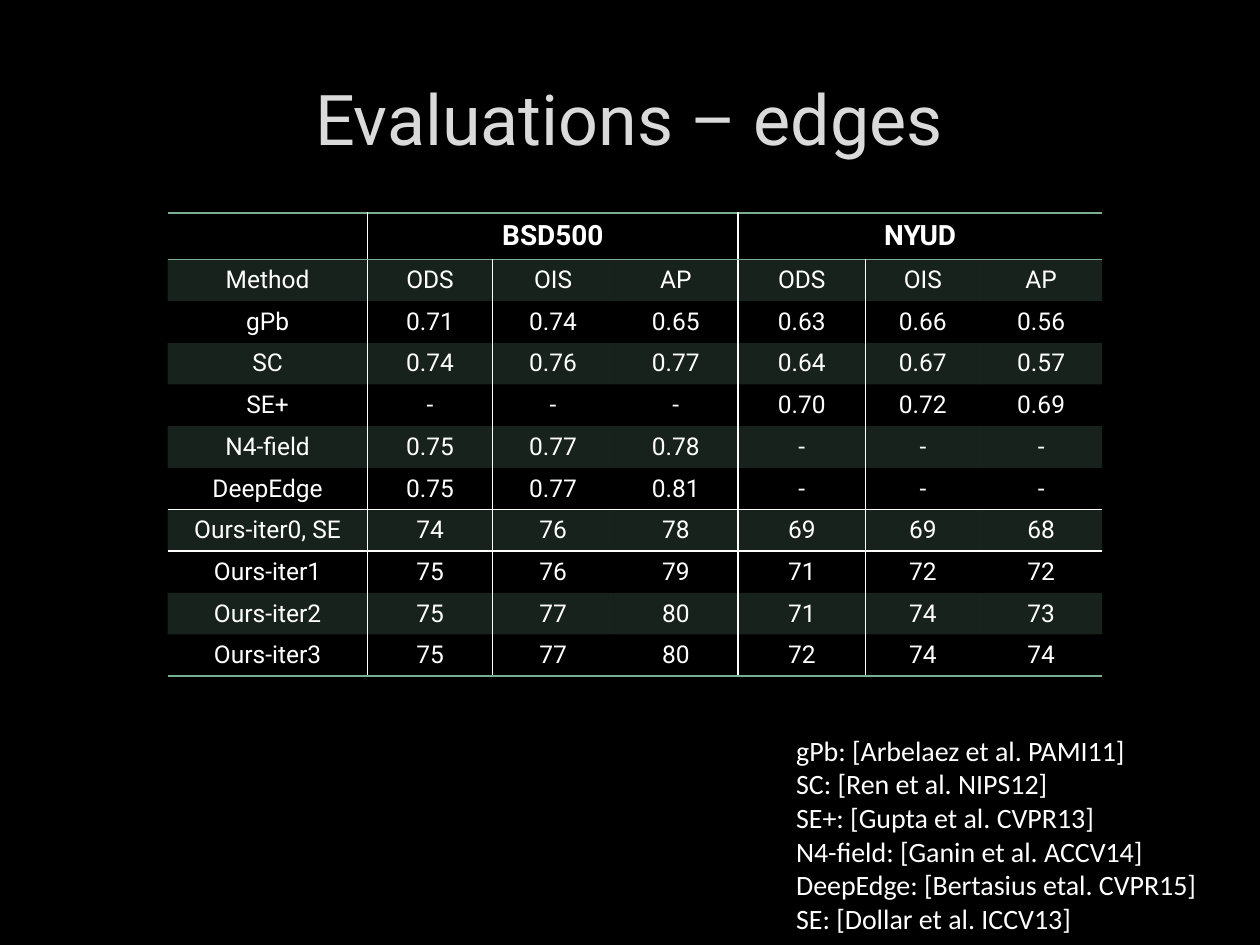
from lxml.etree import SubElement
from pptx import Presentation
from pptx.dml.color import RGBColor
from pptx.enum.text import MSO_ANCHOR, MSO_AUTO_SIZE, PP_ALIGN
from pptx.oxml.ns import qn
from pptx.util import Cm, Pt

WHITE, GREEN, GREY, BLACK = "FFFFFF", "79AE90", "DADADA", "000000"
WIDTHS = [4.03, 2.52, 2.44, 2.51, 2.57, 2.31, 2.46]
HEIGHTS = [0.94] + [0.84] * 10
ROWS = [
    ["", "BSD500", "", "", "NYUD", "", ""],
    ["Method", "ODS", "OIS", "AP", "ODS", "OIS", "AP"],
    ["gPb", "0.71", "0.74", "0.65", "0.63", "0.66", "0.56"],
    ["SC", "0.74", "0.76", "0.77", "0.64", "0.67", "0.57"],
    ["SE+", "-", "-", "-", "0.70", "0.72", "0.69"],
    ["N4-field", "0.75", "0.77", "0.78", "-", "-", "-"],
    ["DeepEdge", "0.75", "0.77", "0.81", "-", "-", "-"],
    ["Ours-iter0, SE", "74", "76", "78", "69", "69", "68"],
    ["Ours-iter1", "75", "76", "79", "71", "72", "72"],
    ["Ours-iter2", "75", "77", "80", "71", "74", "73"],
    ["Ours-iter3", "75", "77", "80", "72", "74", "74"],
]
SOURCES = [
    "gPb: [Arbelaez et al. PAMI11]",
    "SC: [Ren et al. NIPS12]",
    "SE+: [Gupta et al. CVPR13]",
    "N4-field: [Ganin et al. ACCV14]",
    "DeepEdge: [Bertasius etal. CVPR15]",
    "SE: [Dollar et al. ICCV13]",
]
ACROSS = {0: GREEN, 1: GREEN, 7: WHITE, 8: WHITE, 11: GREEN}


def paint(color):
    return RGBColor.from_string(color)


def upright(row, col):
    return WHITE if col in (1, 4) or (row and col in (2, 5)) else None


class Deck:
    """Holds the style and the current slide."""

    def __init__(self, font="Roboto"):
        self.font = font
        self.show = Presentation()
        self.show.slide_width, self.show.slide_height = Cm(25.4), Cm(19.05)
        self.slide = self.show.slides.add_slide(self.show.slide_layouts[6])
        fill = self.slide.background.fill
        fill.solid()
        fill.fore_color.rgb = paint(BLACK)

    def letter(self, frame, lines, size, color=WHITE, font=None, bold=False,
               align=PP_ALIGN.CENTER):
        frame.text = "\n".join(lines)
        for para in frame.paragraphs:
            para.alignment = align
            para.font.name = font or self.font
            para.font.size = Pt(size)
            para.font.bold = bold
            para.font.color.rgb = paint(color)

    def text(self, box, lines, size, wrap=True, **style):
        frame = self.slide.shapes.add_textbox(*map(Cm, box)).text_frame
        frame.word_wrap = wrap
        if wrap:
            frame.vertical_anchor = MSO_ANCHOR.MIDDLE
        else:
            frame.auto_size = MSO_AUTO_SIZE.SHAPE_TO_FIT_TEXT
        self.letter(frame, lines, size, **style)

    def edge(self, cell, side, color):
        props = cell._tc.get_or_add_tcPr()
        line = SubElement(props, qn("a:ln" + side), w=str(Pt(1)))
        if color:
            fill = SubElement(line, qn("a:solidFill"))
            SubElement(fill, qn("a:srgbClr"), val=color)
        else:
            SubElement(line, qn("a:noFill"))

    def shade(self, cell, color, alpha):
        cell.fill.solid()
        cell.fill.fore_color.rgb = paint(color)
        tint = cell._tc.tcPr.find(qn("a:solidFill")).find(qn("a:srgbClr"))
        SubElement(tint, qn("a:alpha"), val=str(alpha * 1000))

    def cell(self, cell, word, row, col):
        cell.margin_top = cell.margin_bottom = 0
        cell.vertical_anchor = MSO_ANCHOR.MIDDLE
        self.letter(cell.text_frame, [word], 14 if row else 16, bold=row == 0)
        self.edge(cell, "L", upright(row, col))
        self.edge(cell, "R", upright(row, col + cell.span_width))
        self.edge(cell, "T", ACROSS.get(row))
        self.edge(cell, "B", ACROSS.get(row + 1))
        if row % 2:
            self.shade(cell, GREEN, 20)
        else:
            cell.fill.background()

    def table(self, left, top, rows, widths, heights):
        box = map(Cm, (left, top, sum(widths), sum(heights)))
        grid = self.slide.shapes.add_table(len(rows), len(widths), *box).table
        grid.first_row = grid.horz_banding = False
        for col, width in zip(grid.columns, widths):
            col.width = Cm(width)
        for row, height in zip(grid.rows, heights):
            row.height = Cm(height)
        for col in (1, 4):
            grid.cell(0, col).merge(grid.cell(0, col + 2))
        for r, words in enumerate(rows):
            for c, word in enumerate(words):
                self.cell(grid.cell(r, c), word, r, c)


def main():
    deck = Deck()
    deck.text((15.8, 14.66, 8.74, 4.37), SOURCES, 16, wrap=False,
              font="Calibri", align=PP_ALIGN.LEFT)
    deck.text((1.9, 1.02, 21.56, 2.69), ["Evaluations – edges"], 40, color=GREY)
    deck.table(3.38, 4.29, ROWS, WIDTHS, HEIGHTS)
    deck.show.save("out.pptx")


if __name__ == "__main__":
    main()
